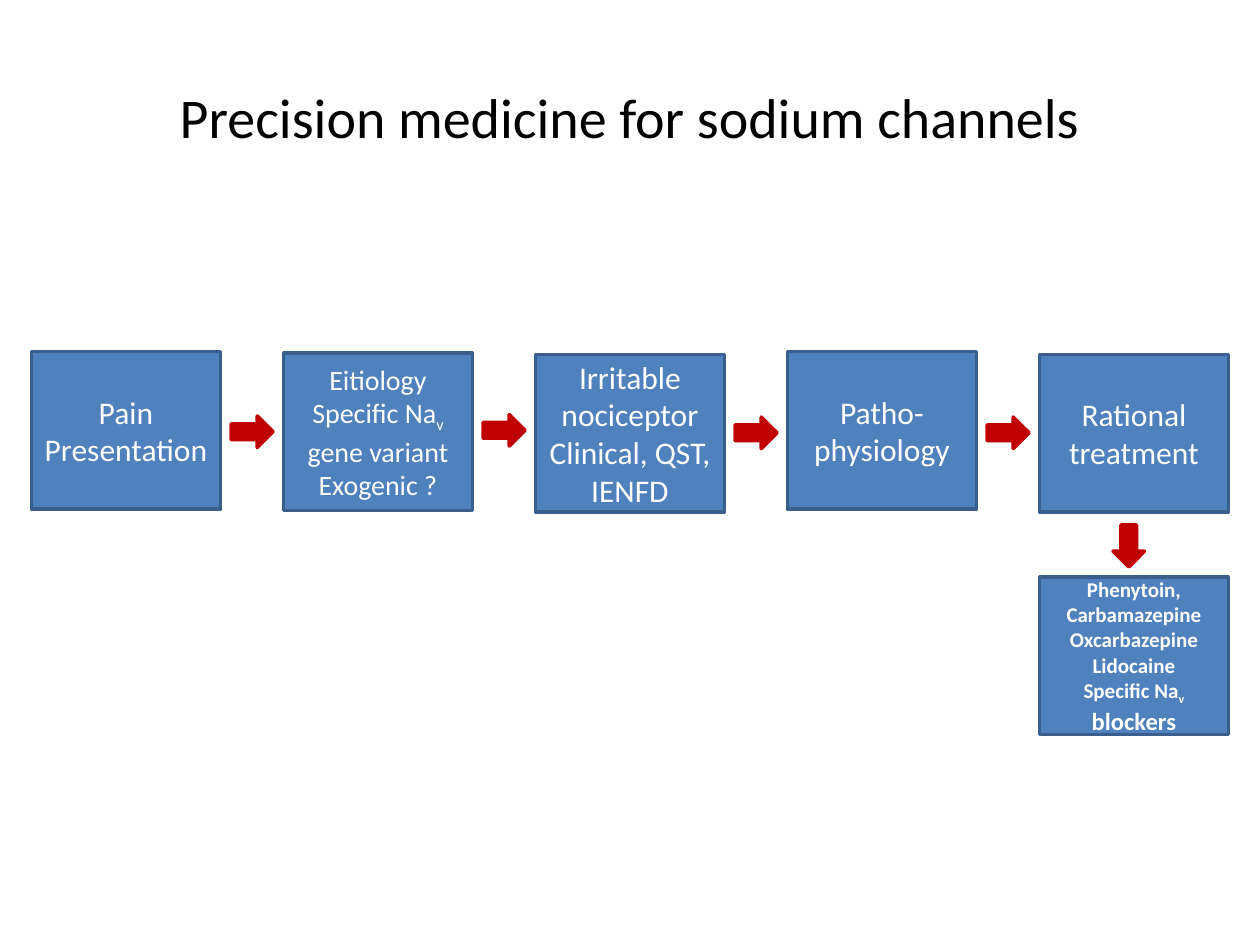
from pptx import Presentation
from pptx.dml.color import RGBColor
from pptx.enum.shapes import MSO_SHAPE
from pptx.enum.text import MSO_ANCHOR, PP_ALIGN
from pptx.util import Pt

RECTANGLE = MSO_SHAPE.RECTANGLE
RIGHT_ARROW = MSO_SHAPE.RIGHT_ARROW
MIDDLE = MSO_ANCHOR.MIDDLE
CENTER = PP_ALIGN.CENTER

LEFT, PITCH = 18, 144
BOX_WIDTH, BOX_HEIGHT = 108, 90
ARROW_WIDTH, ARROW_HEIGHT = 24, 18
ARROW_GAP = (PITCH - BOX_WIDTH - ARROW_WIDTH) / 2
SUBSCRIPT = "-25000"

STEPS = [
    (200.9, 18, ["Pain", "Presentation"]),
    (201.8, 16, ["Eitiology", ["Specific Na", ("v ", {"baseline": SUBSCRIPT}), "gene variant"], "Exogenic ?"]),
    (202.5, 18, ["Irritable nociceptor", "Clinical, QST, IENFD"]),
    (200.9, 18, ["Patho-physiology"]),
    (202.5, 18, ["Rational treatment"]),
]
ARROW_TOPS = [237.7, 236.9, 238.3, 238.3]
DRUGS = [
    "Phenytoin, Carbamazepine",
    "Oxcarbazepine",
    "Lidocaine",
    ["Specific Na", ("v ", {"baseline": SUBSCRIPT}), ("blockers", {"size": 14})],
]


def color(value):
    return RGBColor.from_string(value)


def add_run(paragraph, text, size=18, fill="FFFFFF", bold=False, font="Calibri", baseline=None):
    run = paragraph.add_run()
    run.text = text
    run.font.name = font
    run.font.size = Pt(size)
    run.font.bold = bold
    run.font.color.rgb = color(fill)
    if baseline:
        run.font._element.set("baseline", baseline)


def write(shape, paragraphs, **style):
    frame = shape.text_frame
    frame.word_wrap = True
    frame.vertical_anchor = MIDDLE
    for index, content in enumerate(paragraphs):
        paragraph = frame.add_paragraph() if index else frame.paragraphs[0]
        paragraph.alignment = CENTER
        for part in [content] if isinstance(content, str) else content:
            text, changes = (part, {}) if isinstance(part, str) else part
            add_run(paragraph, text, **{**style, **changes})


class FlowSlide:
    """Draws the elements of a flow diagram in one style on one slide."""

    box_fill, box_line = "4F81BD", "3A5F8C"
    arrow_color = "C00000"
    line_width = 2

    def __init__(self, slide):
        self.slide = slide

    def shape(self, kind, left, top, width, height, fill, line):
        shape = self.slide.shapes.add_shape(kind, Pt(left), Pt(top), Pt(width), Pt(height))
        shape.shadow.inherit = False
        shape.fill.solid()
        shape.fill.fore_color.rgb = color(fill)
        shape.line.color.rgb = color(line)
        shape.line.width = Pt(self.line_width)
        return shape

    def title(self, text):
        box = self.slide.shapes.add_textbox(Pt(36), Pt(21.6), Pt(648), Pt(90))
        write(box, [text], size=32, fill="000000")

    def box(self, left, top, paragraphs, **style):
        shape = self.shape(RECTANGLE, left, top, BOX_WIDTH, BOX_HEIGHT, self.box_fill, self.box_line)
        write(shape, paragraphs, **style)

    def arrow(self, left, top, rotation=0):
        shape = self.shape(RIGHT_ARROW, left, top, ARROW_WIDTH, ARROW_HEIGHT,
                           self.arrow_color, self.arrow_color)
        shape.rotation = rotation


def main():
    presentation = Presentation()
    presentation.slide_width, presentation.slide_height = Pt(720), Pt(540)
    flow = FlowSlide(presentation.slides.add_slide(presentation.slide_layouts[6]))

    flow.title("Precision medicine for sodium channels")
    for index, (top, size, paragraphs) in enumerate(STEPS):
        flow.box(LEFT + index * PITCH, top, paragraphs, size=size)
    for index, top in enumerate(ARROW_TOPS):
        flow.arrow(LEFT + index * PITCH + BOX_WIDTH + ARROW_GAP, top)

    last_left = LEFT + (len(STEPS) - 1) * PITCH
    flow.box(last_left, 329.8, DRUGS, size=12, bold=True)
    flow.arrow(633, 303, rotation=90)

    presentation.save("out.pptx")


if __name__ == "__main__":
    main()
